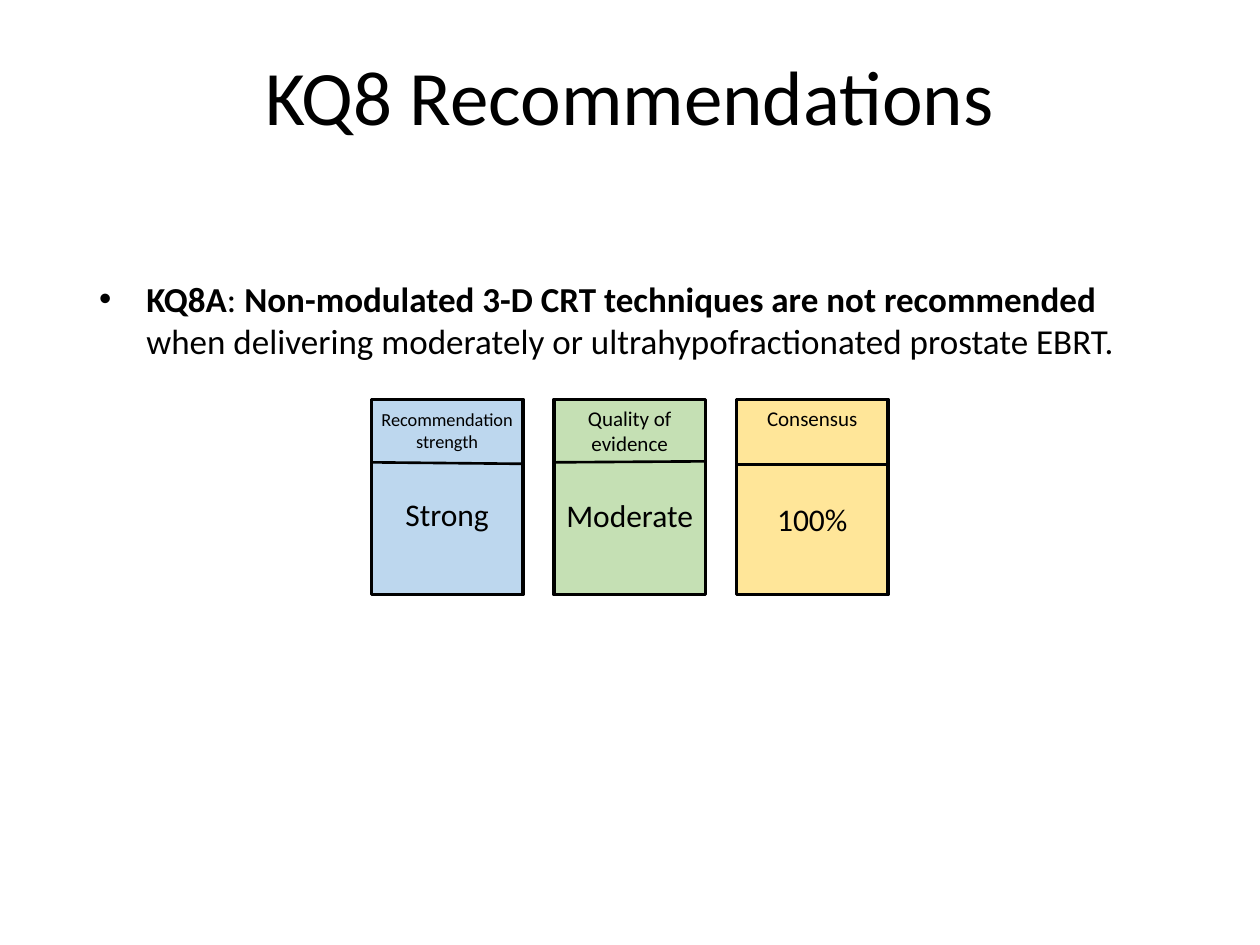
from lxml import etree
from pptx import Presentation
from pptx import util as u
from pptx.dml.color import RGBColor
from pptx.enum import shapes, text
from pptx.oxml.ns import qn

BLACK = "000000"
CARD_LEFT, CARD_TOP, CARD_W, CARD_H, CARD_STEP = 7.49, 8.05, 3.05, 3.94, 3.68

# fill, label, label size, label top inset, value, value top, divider ends
CARDS = [
    ("BDD7EE", "Recommendation strength", 10.5, 0.18, "Strong", 9.98, (9.32, 9.35)),
    ("C5E0B4", "Quality of evidence", 12, 0.13, "Moderate", 10.0, (9.32, 9.3)),
    ("FFE699", "Consensus", 12, 0.13, "100%", 10.08, (9.37, 9.37)),
]


def color(value):
    return RGBColor.from_string(value)


def write(p, content, size=18, bold=False, font="Calibri", fill=BLACK):
    r = p.add_run()
    r.text = content
    r.font.size = u.Pt(size)
    r.font.bold = bold
    r.font.name = font
    r.font.color.rgb = color(fill)


class Deck:
    def __init__(self):
        self.prs = Presentation()
        self.prs.slide_width, self.prs.slide_height = u.Cm(25.4), u.Cm(19.05)
        self.s = self.prs.slides.add_slide(self.prs.slide_layouts[5])

    def frame(self, sp, inset_x=0.1, inset_y=0.0):
        tf = sp.text_frame
        tf.word_wrap = True
        tf.vertical_anchor = text.MSO_ANCHOR.TOP
        tf.margin_left = tf.margin_right = u.Cm(inset_x)
        tf.margin_top = tf.margin_bottom = u.Cm(inset_y)
        return tf.paragraphs[0]

    def title(self, content):
        sp = self.s.shapes.title
        sp.left, sp.top = u.Cm(1.27), u.Cm(0.76)
        sp.width, sp.height = u.Cm(22.86), u.Cm(3.18)
        p = self.frame(sp, 0.25, 0.22)
        p.alignment = text.PP_ALIGN.CENTER
        write(p, content, size=44)

    def bullet(self, runs, x, y, w, h):
        sp = self.s.shapes.add_textbox(u.Cm(x), u.Cm(y), u.Cm(w), u.Cm(h))
        p = self.frame(sp, 0.25, 0.13)
        props = p._p.get_or_add_pPr()
        props.set("marL", str(u.Cm(0.95)))
        props.set("indent", str(-u.Cm(0.95)))
        etree.SubElement(props, qn("a:buFont")).set("typeface", "Arial")
        etree.SubElement(props, qn("a:buChar")).set("char", "•")
        for content, bold in runs:
            write(p, content, size=20, bold=bold)

    def label(self, group, content, x, y, h, size, inset_y=0.0):
        sp = group.shapes.add_textbox(u.Cm(x), u.Cm(y), u.Cm(CARD_W), u.Cm(h))
        p = self.frame(sp, inset_y=inset_y)
        p.alignment = text.PP_ALIGN.CENTER
        write(p, content, size=size)

    def line(self, group, x1, y1, x2, y2):
        c = group.shapes.add_connector(
            shapes.MSO_CONNECTOR.STRAIGHT, u.Cm(x1), u.Cm(y1), u.Cm(x2), u.Cm(y2))
        c.line.color.rgb = color(BLACK)
        c.line.width = u.Pt(1.5)
        etree.SubElement(c._element.spPr, qn("a:effectLst"))

    def card(self, x, fill, head, head_size, head_inset, value, value_top, ends):
        group = self.s.shapes.add_group_shape()
        sp = group.shapes.add_shape(
            shapes.MSO_SHAPE.RECTANGLE, u.Cm(x), u.Cm(CARD_TOP), u.Cm(CARD_W), u.Cm(CARD_H))
        sp.shadow.inherit = False
        sp.fill.solid()
        sp.fill.fore_color.rgb = color(fill)
        sp.line.color.rgb = color(BLACK)
        sp.line.width = u.Pt(2)
        self.line(group, x, ends[0], x + CARD_W, ends[1])
        self.label(group, head, x, CARD_TOP, 1.27, head_size, head_inset)
        self.label(group, value, x, value_top, 0.9, 18)


def main():
    deck = Deck()

    # Title and recommendation
    deck.title("KQ8 Recommendations")
    deck.bullet([
        ("KQ8A", True),
        (": ", False),
        ("Non-modulated 3-D CRT techniques are not recommended ", True),
        ("when delivering moderately or ultrahypofractionated prostate EBRT.", False),
    ], 1.75, 5.46, 21.9, 4.8)

    # Rating cards
    for i, card in enumerate(CARDS):
        deck.card(CARD_LEFT + i * CARD_STEP, *card)

    deck.prs.save("out.pptx")


if __name__ == "__main__":
    main()
